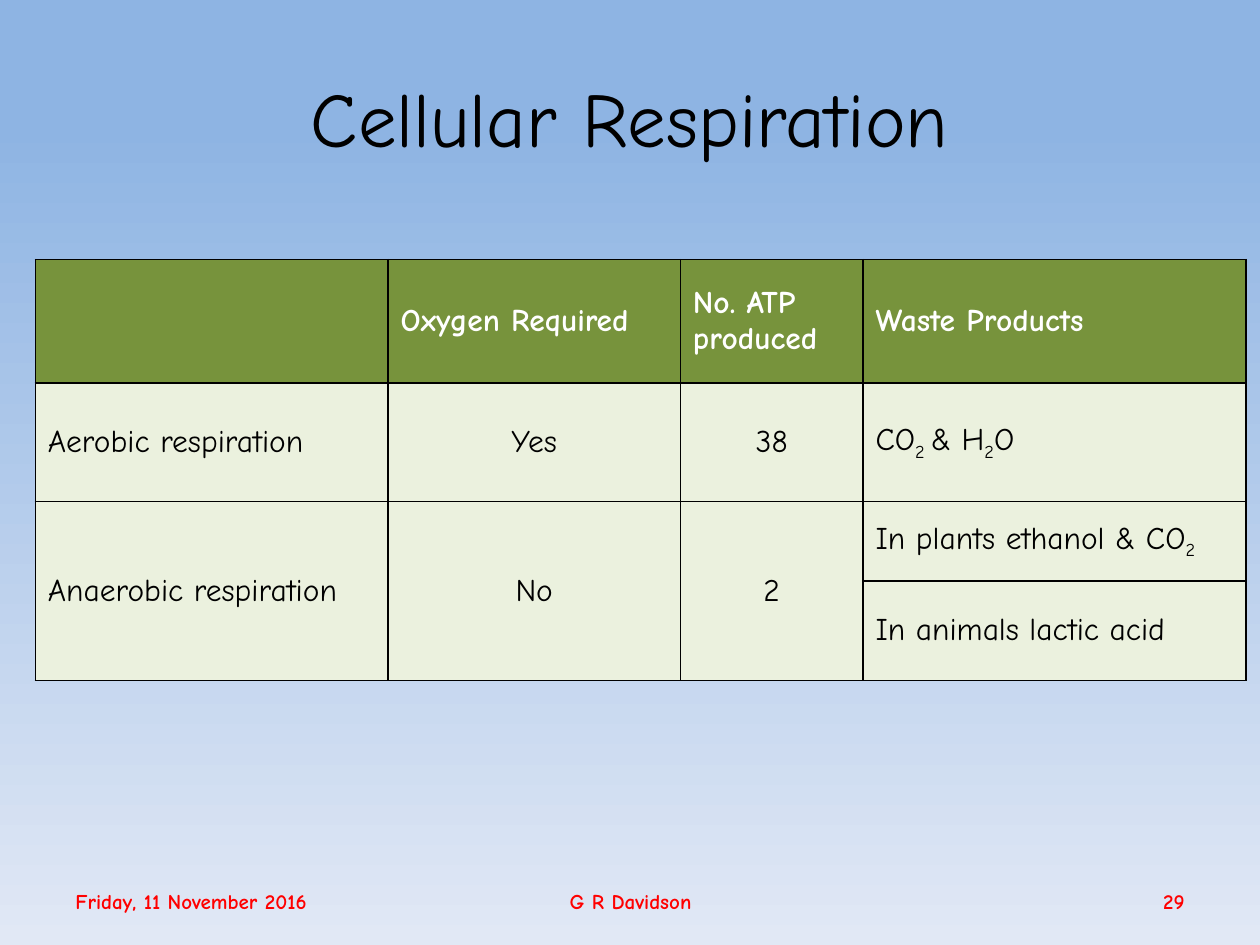
from dataclasses import dataclass

from lxml import etree
from pptx import Presentation
from pptx.dml.color import RGBColor
from pptx.enum import text
from pptx.oxml import ns
from pptx.util import Inches, Pt

FONT = "Comic Neue"
BLACK = RGBColor(0x00, 0x00, 0x00)
WHITE = RGBColor(0xFF, 0xFF, 0xFF)
RED = RGBColor(0xFF, 0x00, 0x00)
SKY = RGBColor(0x8E, 0xB4, 0xE3)
HAZE = RGBColor(0xE1, 0xE8, 0xF5)
OLIVE = RGBColor(0x77, 0x93, 0x3C)
PALE = RGBColor(0xEB, 0xF1, 0xDE)
LEFT, CENTER, RIGHT = text.PP_ALIGN.LEFT, text.PP_ALIGN.CENTER, text.PP_ALIGN.RIGHT
SUBSCRIPT = "~"


@dataclass(frozen=True)
class Style:
    size: int
    color: RGBColor
    bold: bool = False


@dataclass(frozen=True)
class Label:
    words: str
    left: float
    top: float
    width: float
    height: float
    align: text.PP_ALIGN
    style: Style


TITLE = Style(44, BLACK)
FOOTER = Style(12, RED, True)
HEADER = Style(18, WHITE, True)
BODY = Style(18, BLACK)

LABELS = [
    Label("Cellular Respiration", 0.5, 0.3, 9, 1.25, CENTER, TITLE),
    Label("Friday, 11 November 2016", 0.5, 6.95, 3.32, 0.4, LEFT, FOOTER),
    Label("G R Davidson", 3.42, 6.95, 3.17, 0.4, CENTER, FOOTER),
    Label("29", 7.17, 6.95, 2.33, 0.4, RIGHT, FOOTER),
]
COLUMNS = [2.8, 2.32, 1.45, 3.04]
ROWS = [0.98, 0.94, 0.63, 0.79]
CELLS = [
    ["", "Oxygen Required", "No. ATP produced", "Waste Products"],
    ["Aerobic respiration", "Yes", "38", "CO~2 ~& H~2~O"],
    ["Anaerobic respiration", "No", "2", "In plants ethanol & CO~2~"],
    ["", "", "", "In animals lactic acid"],
]


def write(p, words: str, align: text.PP_ALIGN, style: Style) -> None:
    p.alignment = align
    for i, part in enumerate(words.split(SUBSCRIPT)):
        if not part:
            continue
        r = p.add_run()
        r.text = part
        r.font.name = FONT
        r.font.size = Pt(style.size)
        r.font.bold = style.bold
        r.font.color.rgb = style.color
        if i % 2:
            r.font._element.set("baseline", "-25000")


def add_label(s, label: Label) -> None:
    sp = s.shapes.add_textbox(Inches(label.left), Inches(label.top),
                              Inches(label.width), Inches(label.height))
    tf = sp.text_frame
    tf.word_wrap = True
    tf.vertical_anchor = text.MSO_ANCHOR.MIDDLE
    write(tf.paragraphs[0], label.words, label.align, label.style)


def add_borders(cell) -> None:
    tcPr = cell._tc.get_or_add_tcPr()
    for side in ("a:lnL", "a:lnR", "a:lnT", "a:lnB"):
        ln = etree.SubElement(tcPr, ns.qn(side), w=str(Pt(1)))
        fill = etree.SubElement(ln, ns.qn("a:solidFill"))
        etree.SubElement(fill, ns.qn("a:srgbClr"), val=str(BLACK))


def add_comparison(s, left: float, top: float) -> None:
    table = s.shapes.add_table(len(ROWS), len(COLUMNS), Inches(left), Inches(top),
                               Inches(sum(COLUMNS)), Inches(sum(ROWS))).table
    for column, width in zip(table.columns, COLUMNS):
        column.width = Inches(width)
    for row, height in zip(table.rows, ROWS):
        row.height = Inches(height)
    for i, line in enumerate(CELLS):
        for j, words in enumerate(line):
            cell = table.cell(i, j)
            add_borders(cell)
            cell.fill.solid()
            cell.fill.fore_color.rgb = PALE if i else OLIVE
            cell.vertical_anchor = text.MSO_ANCHOR.MIDDLE
            align = CENTER if i and j in (1, 2) else LEFT
            write(cell.text_frame.paragraphs[0], words, align, BODY if i else HEADER)
    for j in range(3):
        table.cell(2, j).merge(table.cell(3, j))


def paint_background(s) -> None:
    fill = s.background.fill
    fill.gradient()
    fill.gradient_angle = 270
    for stop, position, color in zip(fill.gradient_stops, (0.13, 1), (SKY, HAZE)):
        stop.position = position
        stop.color.rgb = color


def main() -> None:
    prs = Presentation()
    prs.slide_width, prs.slide_height = Inches(10), Inches(7.5)
    s = prs.slides.add_slide(prs.slide_layouts[6])
    paint_background(s)
    add_comparison(s, 0.28, 2.06)
    for label in LABELS:
        add_label(s, label)
    prs.save("out.pptx")


if __name__ == "__main__":
    main()
